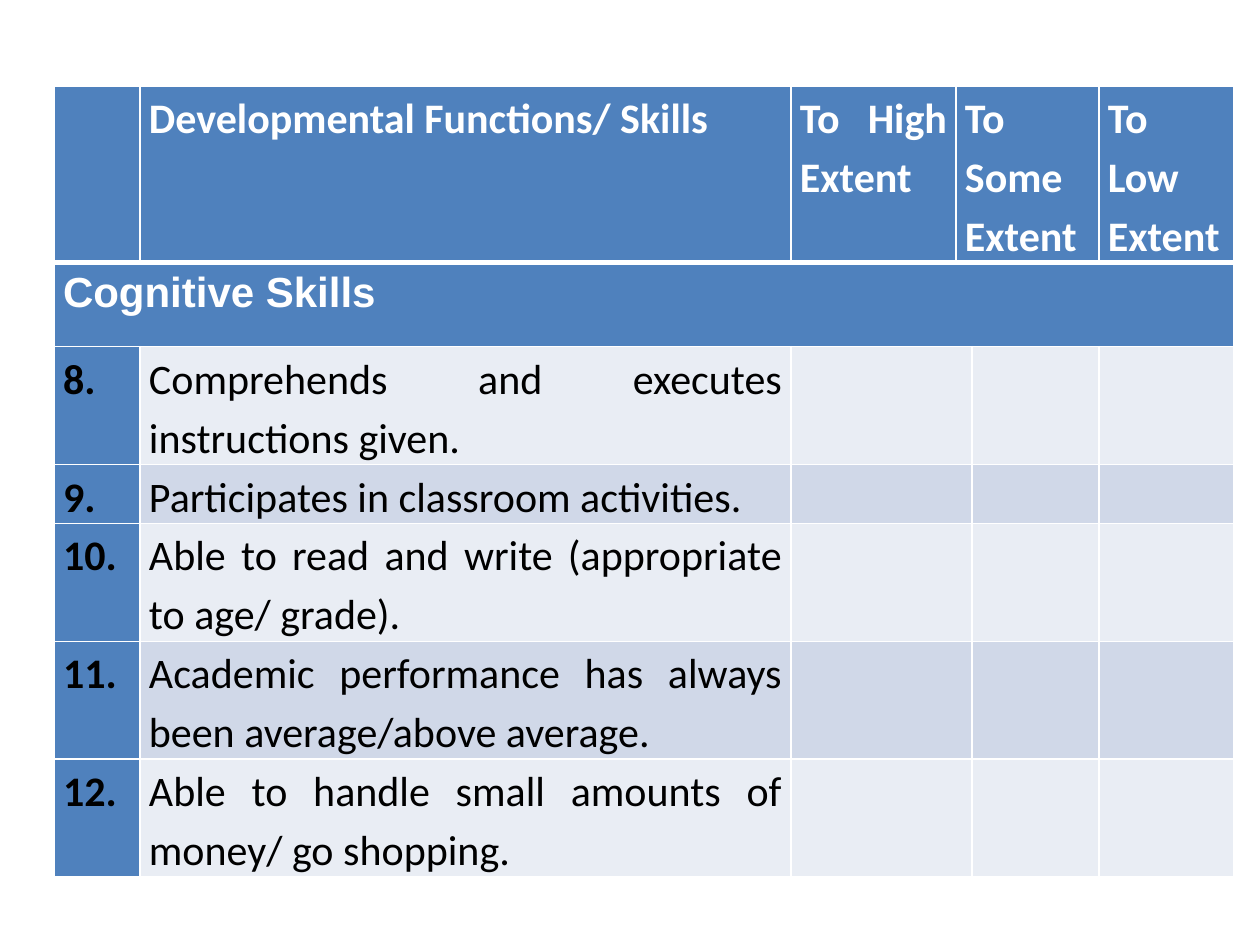
from lxml.etree import SubElement
from pptx import Presentation
from pptx.dml.color import RGBColor
from pptx.enum.text import PP_ALIGN
from pptx.oxml import parse_xml
from pptx.oxml.ns import nsdecls
from pptx.util import Emu, Pt

PX = 914400 // 126
WHITE = RGBColor(0xFF, 0xFF, 0xFF)
BLACK = RGBColor(0x00, 0x00, 0x00)
BLUE = RGBColor(0x4F, 0x81, 0xBD)
BANDS = (RGBColor(0xE9, 0xED, 0xF4), RGBColor(0xD0, 0xD8, 0xE8))

COLUMN_WIDTHS = [86, 651, 165, 16, 127, 135]
ROW_HEIGHTS = [126, 84, 84, 42, 84, 84, 84]
HEADINGS = {1: "Developmental Functions/ Skills", 2: "To High Extent",
            3: "To Some Extent", 5: "To Low Extent"}
SKILLS = [
    ("8.", "Comprehends and executes instructions given."),
    ("9.", "Participates in classroom activities."),
    ("10.", "Able to read and write (appropriate to age/ grade)."),
    ("11.", "Academic performance has always been average/above average."),
    ("12.", "Able to handle small amounts of money/ go shopping."),
]


def px(length):
    return Emu(length * PX)


def write(cell, text, font="Calibri", size=24, color=WHITE, bold=True):
    cell.margin_left = cell.margin_right = px(9)
    cell.margin_top = cell.margin_bottom = 0
    paragraph = cell.text_frame.paragraphs[0]
    paragraph.alignment = PP_ALIGN.JUSTIFY
    paragraph.line_spacing = 1.15
    run = paragraph.add_run()
    run.text = text
    run.font.name, run.font.size, run.font.bold = font, Pt(size), bold
    run.font.color.rgb = color


class Checklist:
    """Holds the table style and the current slide."""

    def __init__(self, slide, border=WHITE):
        self.slide = slide
        self.border = border

    def table(self, left, top, height, widths, heights):
        frame = self.slide.shapes.add_table(
            len(heights), len(widths), px(left), px(top), px(sum(widths)), px(height))
        table = frame.table
        for column, width in zip(table.columns, widths):
            column.width = px(width)
        for row, row_height in zip(table.rows, heights):
            row.height = px(row_height)
        frame.height = px(height)
        return table

    def paint(self, cell, color, top=1, bottom=1):
        cell.fill.solid()
        cell.fill.fore_color.rgb = color
        properties = cell._tc.get_or_add_tcPr()
        sides = {"lnL": 1, "lnR": 1, "lnT": top, "lnB": bottom}
        for position, (side, weight) in enumerate(sides.items()):
            line = parse_xml(f'<a:{side} {nsdecls("a")} w="{Pt(weight)}">'
                             f'<a:solidFill/></a:{side}>')
            SubElement(line[0], line[0].tag.replace("solidFill", "srgbClr"),
                       val=str(self.border))
            properties.insert(position, line)


def main():
    deck = Presentation()
    deck.slide_width, deck.slide_height = px(1260), px(945)
    checklist = Checklist(deck.slides.add_slide(deck.slide_layouts[6]))
    ratings = checklist.table(54, 86, 780, COLUMN_WIDTHS, ROW_HEIGHTS)

    # Fills and borders, with a heavy rule under the headings
    for row in range(len(ROW_HEIGHTS)):
        for column in range(len(COLUMN_WIDTHS)):
            color = BLUE if row < 2 or column == 0 else BANDS[row % 2]
            checklist.paint(ratings.cell(row, column), color,
                            top=3 if row == 1 else 1, bottom=3 if row == 0 else 1)

    # Headings
    ratings.cell(0, 3).merge(ratings.cell(0, 4))
    for column, heading in HEADINGS.items():
        write(ratings.cell(0, column), heading)

    # Section band
    ratings.cell(1, 0).merge(ratings.cell(1, len(COLUMN_WIDTHS) - 1))
    write(ratings.cell(1, 0), "Cognitive Skills", font="Arial")

    # Skills to be rated
    for row, (number, skill) in enumerate(SKILLS, start=2):
        ratings.cell(row, 2).merge(ratings.cell(row, 3))
        write(ratings.cell(row, 0), number, color=BLACK)
        write(ratings.cell(row, 1), skill, color=BLACK, bold=False)

    deck.save("out.pptx")


if __name__ == "__main__":
    main()
